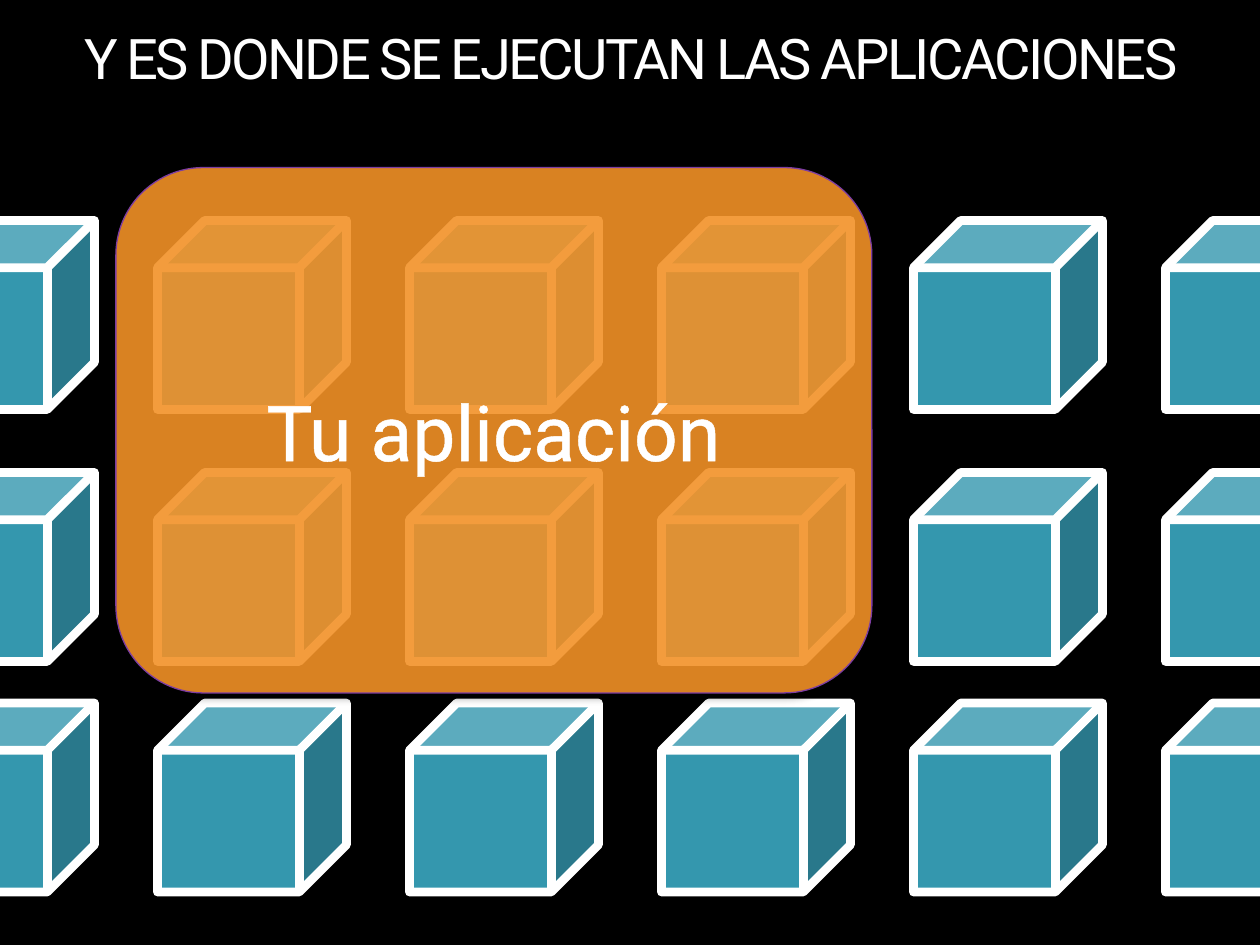
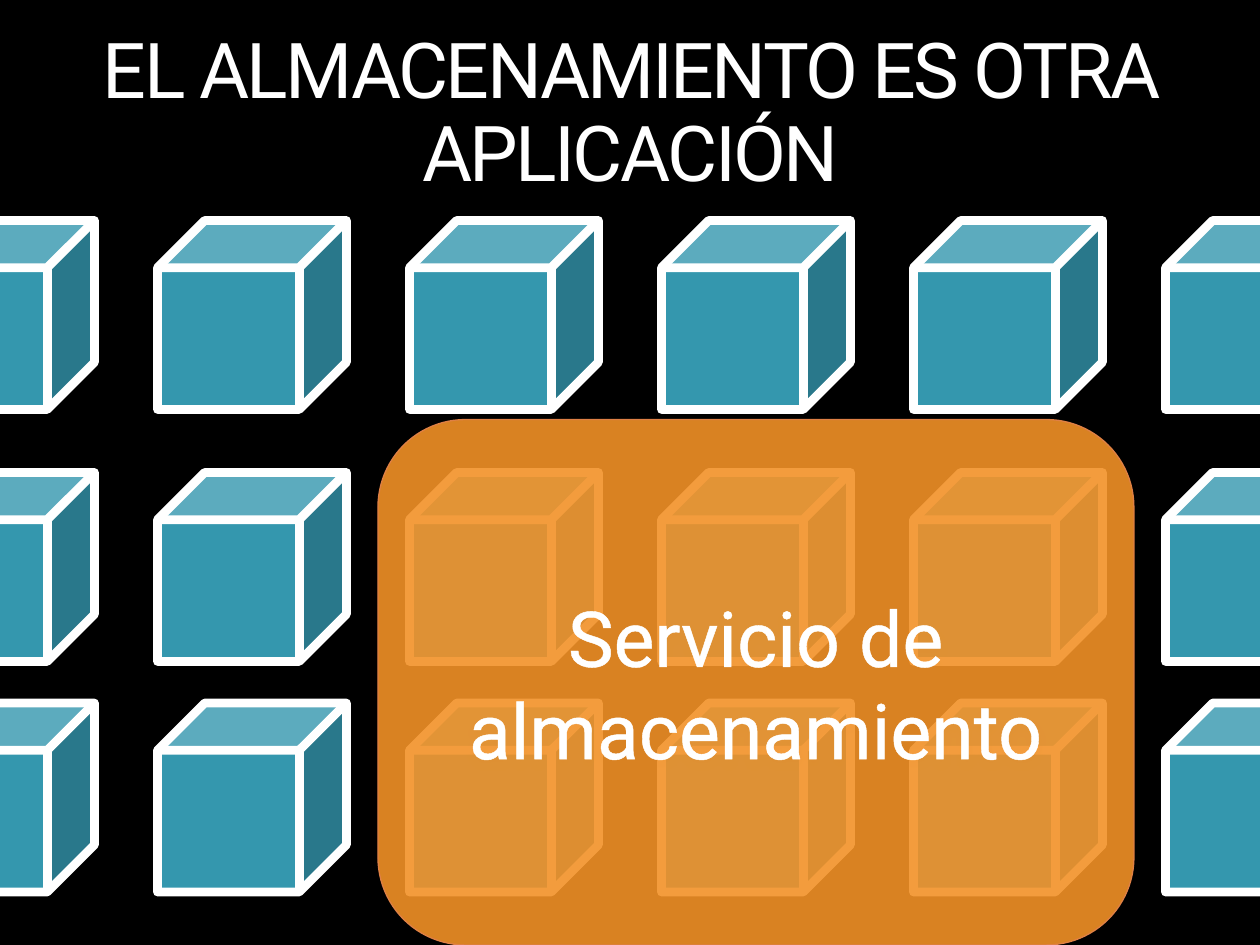
from itertools import product

from lxml.etree import SubElement
from pptx import Presentation
from pptx.dml.color import RGBColor
from pptx.enum.shapes import MSO_SHAPE
from pptx.enum.text import MSO_ANCHOR, MSO_AUTO_SIZE, PP_ALIGN
from pptx.oxml import parse_xml
from pptx.oxml.ns import nsdecls, qn
from pptx.util import Inches, Pt

COLORS = {
    "background": "000000",
    "text": "FFFFFF",
    "cube": "3497AE",
    "cube_edge": "FFFFFF",
    "panel": "FF9929",
    "purple_edge": "7D3DA1",
    "orange_edge": "DF8045",
    "shadow": "000000",
}
FONT = "Roboto"
TITLE_BOX = (0.42, 0.25, 9.17, 1.45)
FIRST_COLUMN, COLUMN_PITCH, COLUMN_COUNT = -0.75, 2, 6
ROW_TOPS = (1.75, 3.75, 5.58)
CUBE_SIZE = 1.5
PANEL_SIZE = (6, 4.17)


def rgb(name):
    return RGBColor.from_string(COLORS[name])


def style_text(para, size):
    para.alignment = PP_ALIGN.CENTER
    para.font.name = FONT
    para.font.size = Pt(size)
    para.font.color.rgb = rgb("text")


def add_shadow(shape):
    shape.shadow.inherit = False
    effects = shape._element.spPr.find(qn("a:effectLst"))
    effects.append(parse_xml(
        f'<a:outerShdw {nsdecls("a")} blurRad="{Pt(4)}" dist="{Pt(3)}" dir="5400000" rotWithShape="0">'
        f'<a:srgbClr val="{COLORS["shadow"]}"><a:alpha val="35000"/></a:srgbClr></a:outerShdw>'
    ))


def add_block(page, kind, box, fill, edge, width):
    block = page.shapes.add_shape(kind, *map(Inches, box))
    block.fill.solid()
    block.fill.fore_color.rgb = rgb(fill)
    block.line.color.rgb = rgb(edge)
    block.line.width = Pt(width)
    add_shadow(block)
    return block


def set_title(page, text, size, box):
    title = page.shapes.title
    title.left, title.top, title.width, title.height = map(Inches, box)
    frame = title.text_frame
    frame.margin_left = frame.margin_top = frame.margin_right = frame.margin_bottom = 0
    frame.vertical_anchor = MSO_ANCHOR.TOP
    frame.word_wrap = True
    frame.auto_size = MSO_AUTO_SIZE.NONE
    frame.text = text
    para = frame.paragraphs[0]
    para.line_spacing = 0.9
    style_text(para, size)
    for span in para.runs:
        span.font._element.set("spc", "-150")


def add_cube_grid(page):
    for top, column in product(ROW_TOPS, range(COLUMN_COUNT)):
        left = FIRST_COLUMN + column * COLUMN_PITCH
        add_block(page, MSO_SHAPE.CUBE, (left, top, CUBE_SIZE, CUBE_SIZE), "cube", "cube_edge", 5)


def add_panel(page, text, corner, edge):
    panel = add_block(page, MSO_SHAPE.ROUNDED_RECTANGLE, (*corner, *PANEL_SIZE), "panel", edge, 0.75)
    fill_color = panel._element.spPr.find(qn("a:solidFill"))[0]
    SubElement(fill_color, qn("a:alpha"), val="85000")
    frame = panel.text_frame
    frame.word_wrap = True
    frame.vertical_anchor = MSO_ANCHOR.MIDDLE
    frame.text = text
    para = frame.paragraphs[0]
    style_text(para, 44)
    for span in para.runs:
        span.font._element.insert(0, parse_xml(
            f'<a:ln {nsdecls("a")} w="{Pt(1.45)}"><a:solidFill>'
            f'<a:srgbClr val="{COLORS["text"]}"/></a:solidFill></a:ln>'
        ))


def add_cube_page(deck, title, title_size, label, corner, edge):
    page = deck.slides.add_slide(deck.slide_layouts[5])
    set_title(page, title, title_size, TITLE_BOX)
    add_cube_grid(page)
    add_panel(page, label, corner, edge)


def main():
    deck = Presentation()
    deck.slide_width, deck.slide_height = Inches(10), Inches(7.5)
    backdrop = deck.slide_master.background.fill
    backdrop.solid()
    backdrop.fore_color.rgb = rgb("background")
    add_cube_page(deck, "Y ES DONDE SE EJECUTAN LAS APLICACIONES", 32,
                  "Tu aplicación", (0.92, 1.33), "purple_edge")
    add_cube_page(deck, "EL ALMACENAMIENTO ES OTRA APLICACIÓN", 44,
                  "Servicio de almacenamiento", (3, 3.33), "orange_edge")
    deck.save("out.pptx")


if __name__ == "__main__":
    main()
